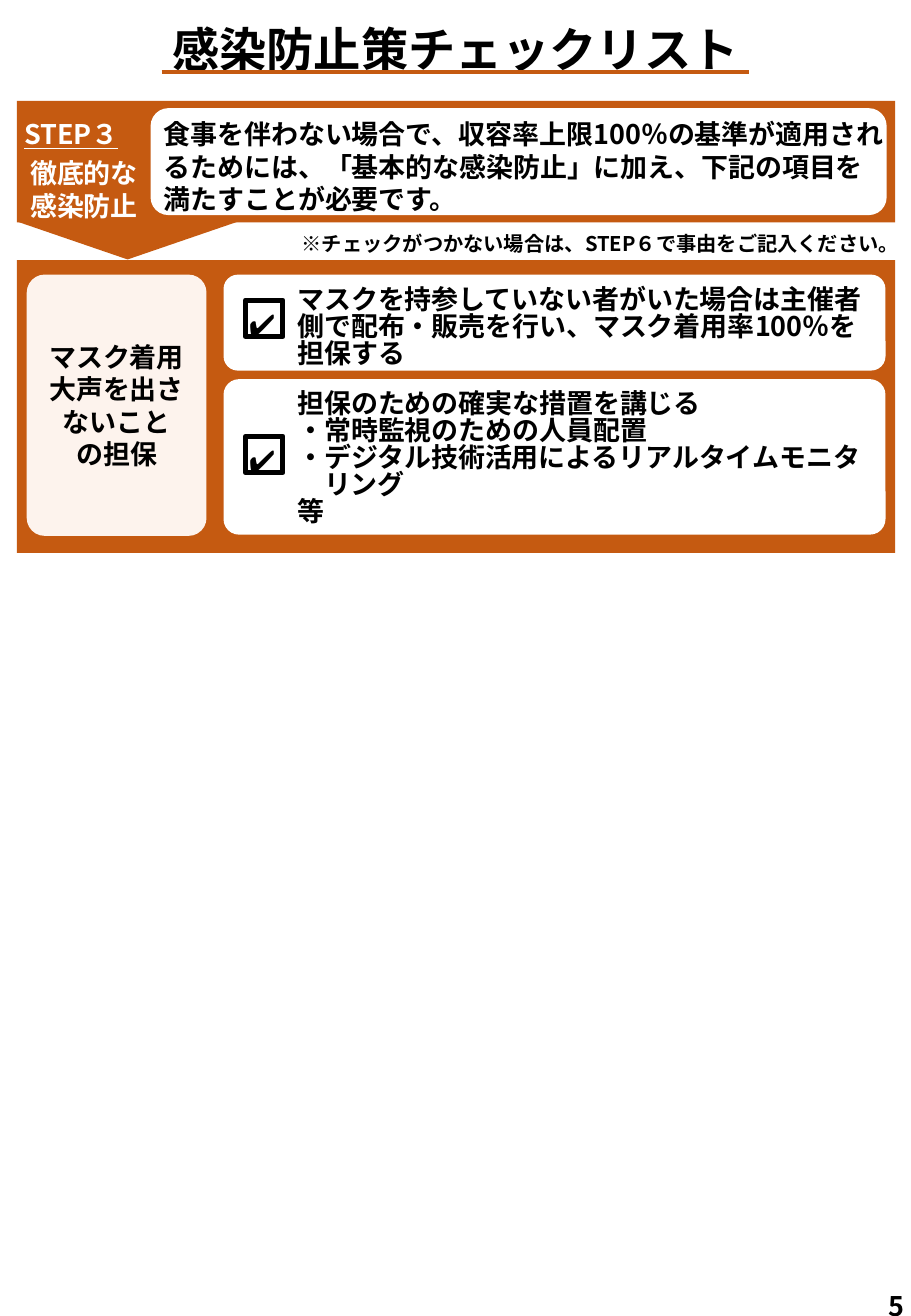
from lxml.etree import SubElement
from pptx import Presentation
from pptx.dml.color import RGBColor
from pptx.enum.lang import MSO_LANGUAGE_ID as Lang
from pptx.enum.shapes import MSO_CONNECTOR as Connector, MSO_SHAPE as Shape
from pptx.enum.text import MSO_ANCHOR as Anchor, PP_ALIGN as Align
from pptx.oxml.ns import qn
from pptx.util import Pt

PX = 9144
ORANGE, CREAM, WHITE, BLACK = "C55A11", "FDF3ED", "FFFFFF", "000000"
JAPANESE = "Noto Sans CJK JP"


def px(*lengths):
    return [length * PX for length in lengths]


def color(hex_code):
    return RGBColor.from_string(hex_code)


def add_block(slide, kind, box, fill=None, outline=None, radius=None):
    block = slide.shapes.add_shape(kind, *px(*box))
    block.shadow.inherit = False
    if radius is not None:
        block.adjustments[0] = radius
    if fill:
        block.fill.solid()
        block.fill.fore_color.rgb = color(fill)
    else:
        block.fill.background()
    if outline:
        block.line.color.rgb = color(outline)
        block.line.width = Pt(3)
    else:
        block.line.fill.background()
    return block


def write(frame, lines, size=16, font=JAPANESE, ink=BLACK, bold=True,
          align=Align.LEFT, leading=None, wrap=True, indents=()):
    frame.word_wrap = wrap
    for index, line in enumerate(lines):
        paragraph = frame.paragraphs[0] if index == 0 else frame.add_paragraph()
        paragraph.alignment = align
        if leading:
            paragraph.line_spacing = Pt(leading)
        if index in indents:
            properties = paragraph._p.get_or_add_pPr()
            properties.set("marL", str(indents[index] * PX))
            properties.set("indent", "0")
        run = paragraph.add_run()
        run.text = line
        run.font.size = Pt(size)
        run.font.bold = bold
        run.font.name = font
        run.font.language_id = Lang.JAPANESE
        run.font.color.rgb = color(ink)
        SubElement(run._r.rPr, qn("a:ea")).set("typeface", font)
    return frame


def add_text(slide, box, lines, **style):
    return write(slide.shapes.add_textbox(*px(*box)).text_frame, lines, **style)


def add_title(slide, left, top, width, height):
    add_text(slide, (left, top, width, height), ["感染防止策チェックリスト"],
             size=28, align=Align.CENTER)
    rule_y = top + 47
    rule = slide.shapes.add_connector(
        Connector.STRAIGHT, *px(left + 85, rule_y, left + 569, rule_y))
    rule.line.color.rgb = color(ORANGE)
    rule.line.width = Pt(2.25)
    SubElement(rule._element.spPr, qn("a:effectLst"))


def add_step_banner(slide, left, top, width, height):
    arrow = add_block(slide, Shape.PENTAGON, (left + 60, top + 9, 62, 181), ORANGE)
    arrow.rotation = 90
    add_block(slide, Shape.RECTANGLE, (left, top, width, height), ORANGE)
    add_block(slide, Shape.ROUNDED_RECTANGLE,
              (left + 110, top + 6, 606, 88), WHITE)
    step = add_text(slide, (left - 4, top + 9, 119, 96),
                    ["STEP３", "徹底的な", "感染防止"],
                    ink=WHITE, indents={1: 5, 2: 5})
    step.paragraphs[0].runs[0].font.underline = True
    step.paragraphs[1].space_before = Pt(4)
    add_text(slide, (left + 111, top + 9, 614, 91),
             ["食事を伴わない場合で、収容率上限100％の基準が適用されるためには、"
              "「基本的な感染防止」に加え、下記の項目を満たすことが必要です。"])
    add_text(slide, (left + 197, top + height, 539, 33),
             ["※チェックがつかない場合は、STEP６で事由をご記入ください。"],
             size=12, align=Align.RIGHT, leading=16)


def add_check_item(slide, box, lines, radius, check_offset, indents=()):
    left, top, width, height = box
    add_block(slide, Shape.ROUNDED_RECTANGLE, box, WHITE, radius=radius)
    check_left, check_top = left + 18, top + check_offset
    add_block(slide, Shape.RECTANGLE, (check_left, check_top, 31, 30), outline=BLACK)
    add_text(slide, (left + 51, top + 6, 514, height - 6), lines,
             leading=16, indents=indents)
    add_text(slide, (check_left - 7, check_top, 45, 40), ["✔"],
             size=18, font="Calibri", bold=False, wrap=False)


def add_checklist(slide, left, top, width, height):
    add_block(slide, Shape.RECTANGLE, (left, top, width, height), ORANGE)
    topic = add_block(slide, Shape.ROUNDED_RECTANGLE,
                      (left + 8, top + 12, 148, 215), CREAM, radius=0.1).text_frame
    topic.margin_left = topic.margin_right = 7 * PX
    topic.margin_top = topic.margin_bottom = 4 * PX
    topic.vertical_anchor = Anchor.MIDDLE
    write(topic, ["マスク着用", "大声を出さないこと", "の担保"], align=Align.CENTER)
    add_check_item(slide, (left + 170, top + 12, 545, 79),
                   ["マスクを持参していない者がいた場合は主催者",
                    "側で配布・販売を行い、マスク着用率100％を",
                    "担保する"], radius=0.15, check_offset=21)
    add_check_item(slide, (left + 170, top + 98, 545, 128),
                   ["担保のための確実な措置を講じる",
                    "・常時監視のための人員配置",
                    "・デジタル技術活用によるリアルタイムモニタ",
                    "リング",
                    "等"], radius=0.1, check_offset=47, indents={3: 22})


def main():
    deck = Presentation()
    deck.slide_width, deck.slide_height = px(750, 1083)
    slide = deck.slides.add_slide(deck.slide_layouts[6])
    add_step_banner(slide, 14, 83, 723, 100)
    add_title(slide, 48, 12, 654, 57)
    add_checklist(slide, 14, 214, 723, 241)
    add_text(slide, (722, 1056, 28, 27), ["5"], wrap=False)
    deck.save("out.pptx")


if __name__ == "__main__":
    main()
